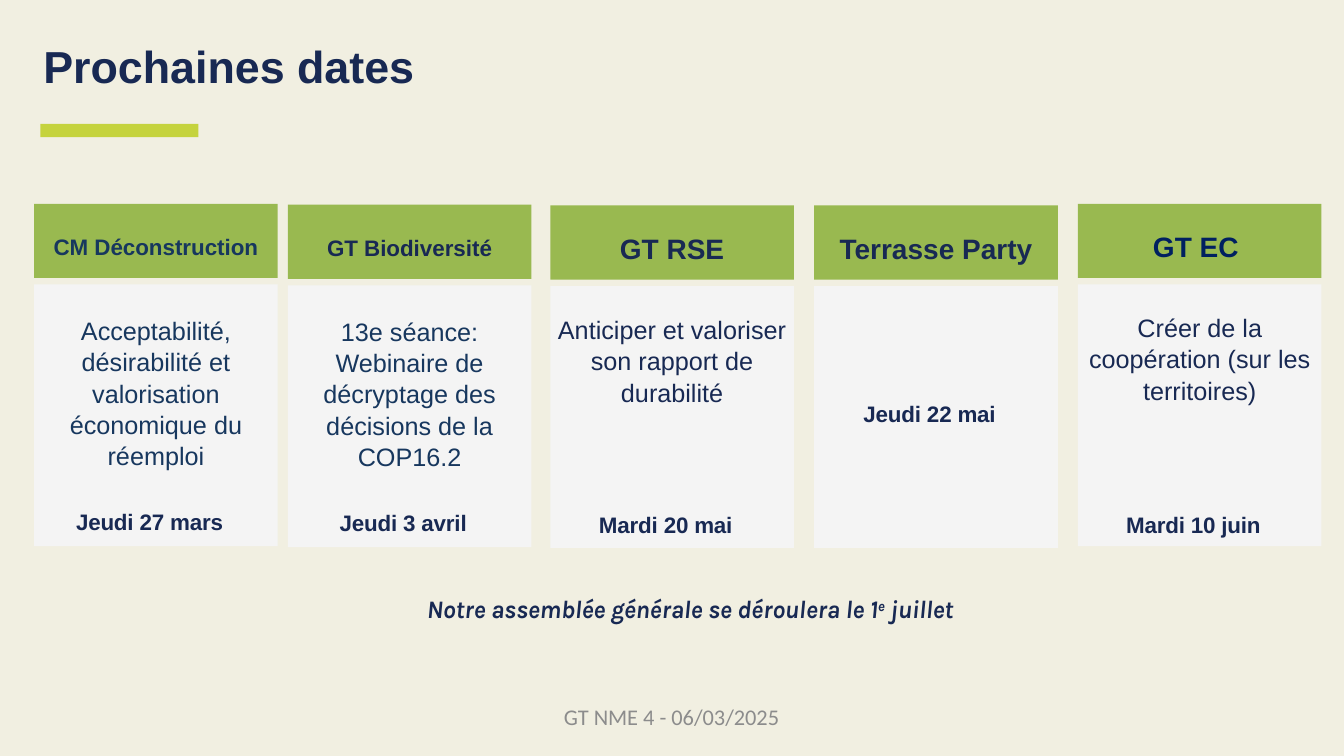
from pptx import Presentation
from pptx.dml.color import RGBColor as RGB
from pptx.enum.shapes import MSO_SHAPE as Kind
from pptx.enum.text import MSO_ANCHOR as Anchor, PP_ALIGN as Align
from pptx.util import Pt

CREAM = RGB(0xF1, 0xEF, 0xE1)
LIME = RGB(0xC5, 0xD3, 0x3D)
GREEN = RGB(0x99, 0xB9, 0x50)
PALE = RGB(0xF4, 0xF4, 0xF4)
NAVY = RGB(0x18, 0x29, 0x53)
BLUE = RGB(0x17, 0x37, 0x5E)
DEEP = RGB(0x00, 0x20, 0x60)
GREY = RGB(0x8C, 0x8C, 0x8C)

HEAD_H, BODY_H, STEP, WIDE = 53, 187, 57.6, 174

# left, top, heading, its size and colour, topic, its colour and top inset, date, its bottom
CARDS = [
    (24.4, 145.6, "CM Déconstruction", 16, BLUE,
     "Acceptabilité, désirabilité et valorisation économique du réemploi", BLUE, 21,
     "Jeudi 27 mars", 178.8),
    (205.6, 146.2, "GT Biodiversité", 16, NAVY,
     "13e séance: Webinaire de décryptage des décisions de la COP16.2", BLUE, 21,
     "Jeudi 3 avril", 179.2),
    (393.1, 146.8, "GT RSE", 20, NAVY,
     "Anticiper et valoriser son rapport de durabilité", NAVY, 19,
     "Mardi 20 mai", 180),
    (581.6, 146.8, "Terrasse Party", 20, NAVY, "", NAVY, 19, "Jeudi 22 mai", 100.4),
    (770, 145.6, "GT EC ", 20, DEEP,
     "Créer de la coopération (sur les territoires)", NAVY, 19,
     "Mardi 10 juin", 181.2),
]


def block(slide, x, y, w, h, fill):
    shape = slide.shapes.add_shape(Kind.RECTANGLE, Pt(x), Pt(y), Pt(w), Pt(h))
    shape.shadow.inherit = False
    shape.fill.solid()
    shape.fill.fore_color.rgb = fill
    shape.line.fill.background()
    return shape


def area(slide, x, y, w, h):
    return slide.shapes.add_textbox(Pt(x), Pt(y), Pt(w), Pt(h))


def write(shape, text, size=16, color=NAVY, font="Arial", bold=False, italic=False,
          align=Align.CENTER, anchor=Anchor.TOP, left=0, top=0, lead=None,
          track=None, rises=()):
    """Fill a shape with one paragraph; text is a string or a list of runs."""
    frame = shape.text_frame
    frame.word_wrap = True
    frame.vertical_anchor = anchor
    frame.margin_left, frame.margin_top = Pt(left), Pt(top)
    frame.margin_right = frame.margin_bottom = 0
    para = frame.paragraphs[0]
    para.alignment = align
    if lead:
        para.line_spacing = lead
    for i, part in enumerate([text] if isinstance(text, str) else text):
        run = para.add_run()
        run.text = part
        run.font.name, run.font.size = font, Pt(size)
        run.font.bold, run.font.italic = bold, italic
        run.font.color.rgb = color
        props = run._r.get_or_add_rPr()
        if track:
            props.set("spc", str(track))
        if i in rises:
            props.set("baseline", "30000")


def title(slide, x, y, w, h):
    write(area(slide, x, y, w, h), "Prochaines dates", size=32, bold=True,
          align=Align.LEFT, left=0.7, top=1.4)
    block(slide, x - 1.4, y + 61.8, 113, 9.6, LIME)


def card(slide, x, y, head, size, tint, topic, ink, gap, date, low):
    # Heading
    write(block(slide, x, y, WIDE, HEAD_H, GREEN), head, size=size, color=tint,
          bold=True, anchor=Anchor.MIDDLE, top=8)
    # Topic
    body = y + STEP
    panel = block(slide, x, body, WIDE, BODY_H, PALE)
    if topic:
        write(panel, topic, size=18, color=ink, top=gap, lead=1.04)
    # Date
    write(area(slide, x - 17, body + low - 32, 169, 32), date, bold=True,
          anchor=Anchor.BOTTOM, left=30, top=12, track=-10)


def notice(slide, x, y, w, h):
    write(area(slide, x, y, w, h),
          ["Notre assemblée générale se déroulera le 1", "e", " juillet"],
          size=18, font="Karla", bold=True, italic=True, left=30, top=3.6,
          track=-10, rises=(1,))


def footer(slide, x, y, w, h):
    write(area(slide, x, y, w, h), "GT NME 4 - 06/03/2025", font="Calibri", color=GREY)


def main():
    deck = Presentation()
    deck.slide_width, deck.slide_height = Pt(960), Pt(540)
    slide = deck.slides.add_slide(deck.slide_layouts[6])
    slide.background.fill.solid()
    slide.background.fill.fore_color.rgb = CREAM

    title(slide, 30.2, 26.6, 420, 39.6)
    for item in CARDS:
        card(slide, *item)
    notice(slide, 226, 420.5, 504, 29)
    footer(slide, 326, 502, 307.5, 19.5)
    deck.save("out.pptx")


if __name__ == "__main__":
    main()
